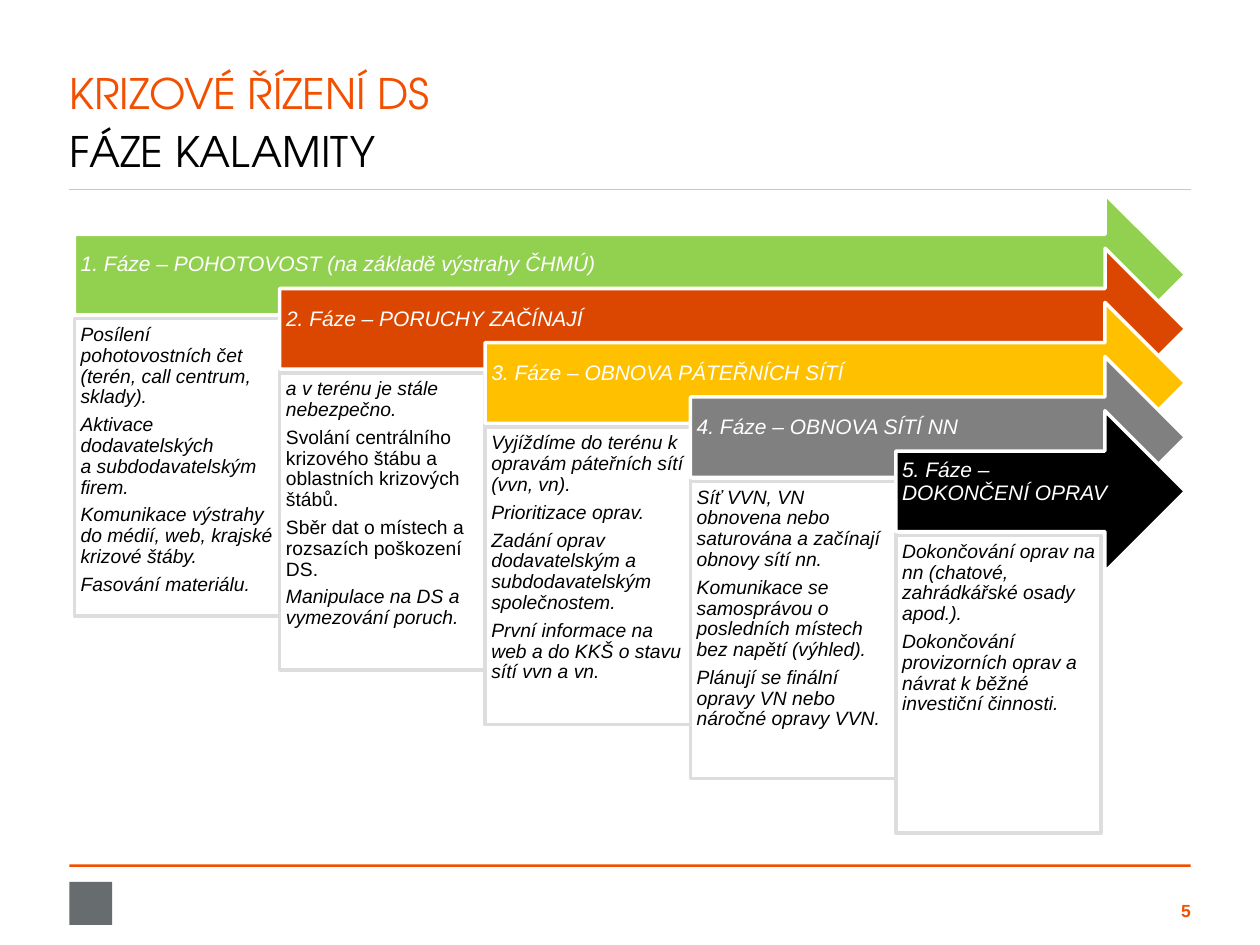
"""Build the slide on the phases of a calamity in distribution network crisis management."""
from dataclasses import dataclass

import pptx
import pptx.dml.color
import pptx.enum.shapes
import pptx.enum.text
import pptx.oxml.ns
import pptx.util
from lxml import etree
from pptx.dml.color import RGBColor
from pptx.util import Inches

ORANGE = RGBColor(0xF2, 0x4F, 0x00)
BLACK = RGBColor(0x00, 0x00, 0x00)
WHITE = RGBColor(0xFF, 0xFF, 0xFF)
FOOTER_GREY = RGBColor(0x67, 0x6C, 0x6E)
RULE_GREY = RGBColor(0xC8, 0xC8, 0xC8)
CARD_GREY = RGBColor(0xDD, 0xDD, 0xDD)
GREEN = RGBColor(0x92, 0xD0, 0x50)
RUST = RGBColor(0xDB, 0x47, 0x00)
AMBER = RGBColor(0xFF, 0xC0, 0x00)
MID_GREY = RGBColor(0x80, 0x80, 0x80)

HEADING_FONT = "TeX Gyre Adventor"
BODY_FONT = "Arial"

MARGIN, CONTENT_WIDTH = 0.55, 8.9
FIRST_LEFT, FIRST_TOP, ARROW_TIP = 0.59, 1.54, 9.41
STEP_X, STEP_Y = 1.63, 0.43
ARROW_HEIGHT, CARD_OFFSET, CARD_HEIGHT = 1.28, 0.99, 2.36

SHAPES = pptx.enum.shapes.MSO_SHAPE
ANCHOR = pptx.enum.text.MSO_ANCHOR
ALIGN = pptx.enum.text.PP_ALIGN


@dataclass(frozen=True)
class Activity:
    text: str
    italic: bool = True


@dataclass(frozen=True)
class Phase:
    heading: str
    color: RGBColor
    activities: tuple[Activity, ...]


@dataclass(frozen=True)
class Box:
    left: float
    top: float
    width: float
    height: float

    def lengths(self) -> tuple[pptx.util.Length, ...]:
        return tuple(Inches(n) for n in (self.left, self.top, self.width, self.height))


PHASES = (
    Phase("1. Fáze – POHOTOVOST (na základě výstrahy ČHMÚ)", GREEN, (
        Activity("Posílení pohotovostních čet (terén, call centrum, sklady)."),
        Activity("Aktivace dodavatelských \va subdodavatelským firem."),
        Activity("Komunikace výstrahy do médií, web, krajské krizové štáby."),
        Activity("Fasování materiálu."),
    )),
    Phase("2. Fáze – PORUCHY ZAČÍNAJÍ", RUST, (
        Activity("a v terénu je stále nebezpečno."),
        Activity("Svolání centrálního krizového štábu a oblastních krizových štábů.", False),
        Activity("Sběr dat o místech a rozsazích poškození DS.", False),
        Activity("Manipulace na DS a vymezování poruch."),
    )),
    Phase("3. Fáze – OBNOVA PÁTEŘNÍCH SÍTÍ", AMBER, (
        Activity("Vyjíždíme do terénu k opravám páteřních sítí (vvn, vn)."),
        Activity("Prioritizace oprav."),
        Activity("Zadání oprav dodavatelským a subdodavatelským společnostem."),
        Activity("První informace na web a do KKŠ o stavu sítí vvn a vn."),
    )),
    Phase("4. Fáze – OBNOVA SÍTÍ NN", MID_GREY, (
        Activity("Síť VVN, VN obnovena nebo saturována a začínají obnovy sítí nn."),
        Activity("Komunikace se samosprávou o posledních místech bez napětí (výhled)."),
        Activity("Plánují se finální opravy VN nebo náročné opravy VVN."),
    )),
    Phase("5. Fáze – DOKONČENÍ OPRAV", BLACK, (
        Activity("Dokončování oprav na nn (chatové, zahrádkářské osady apod.)."),
        Activity("Dokončování provizorních oprav a návrat k běžné investiční činnosti."),
    )),
)


def set_frame(frame, anchor, left=0.0, top=0.0, right=0.0, bottom=0.0) -> None:
    frame.word_wrap = True
    frame.vertical_anchor = anchor
    frame.margin_left, frame.margin_top = Inches(left), Inches(top)
    frame.margin_right, frame.margin_bottom = Inches(right), Inches(bottom)


def set_font(font, name: str, size: int, color: RGBColor, bold=False, italic=False) -> None:
    font.name, font.size = name, pptx.util.Pt(size)
    font.bold, font.italic = bold, italic
    font.color.rgb = color


def add_block(slide, kind, box: Box, fill: RGBColor, line: RGBColor | None = None):
    block = slide.shapes.add_shape(kind, *box.lengths())
    block.shadow.inherit = False
    block.fill.solid()
    block.fill.fore_color.rgb = fill
    if line is None:
        block.line.fill.background()
    else:
        block.line.color.rgb = line
        block.line.width = pptx.util.Pt(2)
    return block


def write_activities(frame, activities: tuple[Activity, ...], size: int, color: RGBColor) -> None:
    for number, activity in enumerate(activities):
        paragraph = frame.add_paragraph() if number else frame.paragraphs[0]
        paragraph.text = activity.text
        paragraph.alignment = ALIGN.LEFT
        paragraph.line_spacing = 0.9
        paragraph.space_after = pptx.util.Pt(4)
        set_font(paragraph.font, BODY_FONT, size, color, italic=activity.italic)


def add_phase(slide, phase: Phase, step: int) -> None:
    left, top = FIRST_LEFT + step * STEP_X, FIRST_TOP + step * STEP_Y
    arrow = add_block(slide, SHAPES.RIGHT_ARROW,
                      Box(left, top, ARROW_TIP - left, ARROW_HEIGHT), phase.color, WHITE)
    set_frame(arrow.text_frame, ANCHOR.MIDDLE, 0.05, 0.05, 0.28, 0.2)
    write_activities(arrow.text_frame, (Activity(phase.heading),), 12, WHITE)
    card = add_block(slide, SHAPES.RECTANGLE,
                     Box(left, top + CARD_OFFSET, STEP_X, CARD_HEIGHT), WHITE, CARD_GREY)
    set_frame(card.text_frame, ANCHOR.TOP, 0.05, 0.05, 0.04, 0.05)
    write_activities(card.text_frame, phase.activities, 11, BLACK)


def add_page_number(slide, number: str) -> None:
    page = slide.shapes.add_textbox(*Box(9.11, 7.14, 0.34, 0.17).lengths())
    set_frame(page.text_frame, ANCHOR.MIDDLE)
    paragraph = page.text_frame.paragraphs[0]
    paragraph.text = number
    paragraph.alignment = ALIGN.RIGHT
    set_font(paragraph.font, BODY_FONT, 10, ORANGE, bold=True)


def add_title(slide) -> None:
    title = slide.shapes.title
    title.left, title.top, title.width, title.height = Box(
        MARGIN, 0.48, CONTENT_WIDTH, 0.93).lengths()
    set_frame(title.text_frame, ANCHOR.TOP)
    paragraph = title.text_frame.paragraphs[0]
    paragraph.alignment = ALIGN.LEFT
    paragraph.line_spacing = pptx.util.Pt(33)
    topic = paragraph.add_run()
    topic.text = "KRIZOVÉ ŘÍZENÍ DS"
    set_font(topic.font, HEADING_FONT, 24, ORANGE)
    paragraph.add_line_break()
    subject = paragraph.add_run()
    subject.text = "FÁZE KALAMITY"
    set_font(subject.font, HEADING_FONT, 24, BLACK)


def add_title_rule(slide) -> None:
    rule = slide.shapes.add_connector(
        pptx.enum.shapes.MSO_CONNECTOR.STRAIGHT, Inches(MARGIN), Inches(1.5),
        Inches(MARGIN + CONTENT_WIDTH), Inches(1.5))
    rule.line.color.rgb = RULE_GREY
    rule.line.width = pptx.util.Pt(0.5)
    etree.SubElement(rule._element.spPr, pptx.oxml.ns.qn("a:effectLst"))


def main() -> None:
    deck = pptx.Presentation()
    deck.slide_width, deck.slide_height = Inches(10), Inches(7.5)
    slide = deck.slides.add_slide(deck.slide_layouts[5])
    add_title(slide)
    add_title_rule(slide)
    add_block(slide, SHAPES.RECTANGLE, Box(MARGIN, 6.86, CONTENT_WIDTH, 0.02), ORANGE)
    add_block(slide, SHAPES.RECTANGLE, Box(MARGIN, 7, 0.34, 0.34), FOOTER_GREY)
    add_page_number(slide, "5")
    for step, phase in enumerate(PHASES):
        add_phase(slide, phase, step)
    deck.save("out.pptx")


if __name__ == "__main__":
    main()
